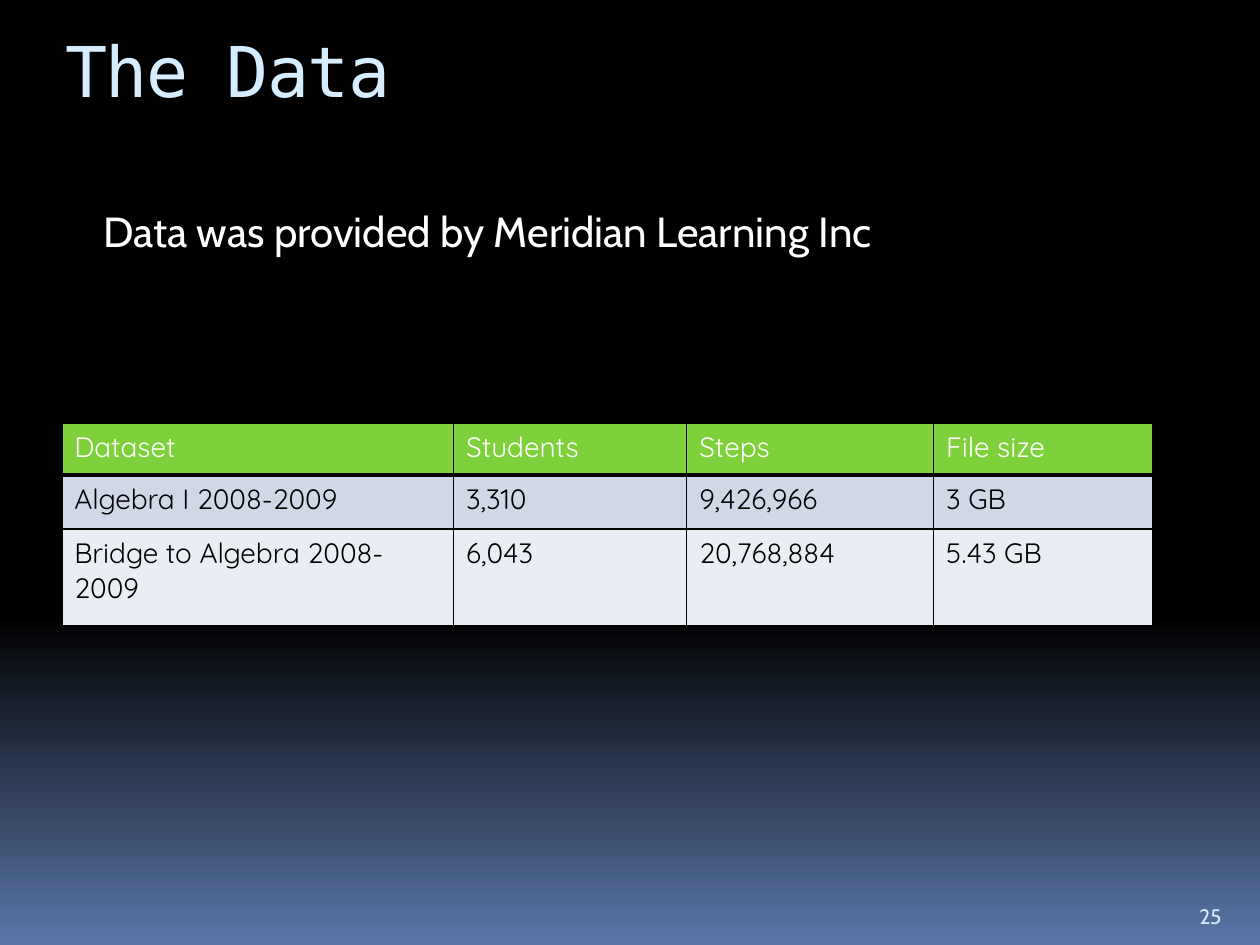
import copy
import pptx
import pptx.util
import pptx.dml.color
import pptx.enum.shapes
import pptx.enum.text
import pptx.oxml.ns

HUES = {"black": "000000", "white": "FFFFFF", "sky": "D6ECFF", "blue": "5B77A8",
        "green": "7FD13B", "band": "D0D8E8", "pale": "E9EDF4"}
MONO, SANS, GRID = "DejaVu Sans Mono", "Cabin", "Quicksand"
ROWS = [["Dataset", "Students", "Steps", "File size"],
        ["Algebra I 2008-2009", "3,310", "9,426,966", "3 GB"],
        ["Bridge to Algebra 2008-2009", "6,043", "20,768,884", "5.43 GB"]]
# Fill and text colour of each row
LOOKS = [("green", "white"), ("band", "black"), ("pale", "black")]
COLS = [3.11, 1.85, 1.96, 1.74]
HIGHS = [0.41, 0.43, 0.77]
# Left and width of each accent bar, from the left of their box
BARS = [(0.1, 0.05), (0.05, 0.03), (0.03, 0.01), (0, 0.01)]

inch = pptx.util.Inches
ns = pptx.oxml.ns.qn
Pin = pptx.enum.text.MSO_ANCHOR


def hue(name):
    return pptx.dml.color.RGBColor.from_string(HUES[name])


def write(frame, text, font, size, tint):
    frame.text = text
    for part in frame.paragraphs:
        part.alignment = pptx.enum.text.PP_ALIGN.LEFT
        for run in part.runs:
            run.font.name = font
            run.font.size = pptx.util.Pt(size)
            run.font.bold = False
            run.font.color.rgb = hue(tint)


def place(shape, box, pin):
    shape.left, shape.top, shape.width, shape.height = map(inch, box)
    frame = shape.text_frame
    frame.word_wrap = True
    frame.auto_size = pptx.enum.text.MSO_AUTO_SIZE.NONE
    frame.vertical_anchor = pin
    return frame


def back(slide):
    # Black down to 65 %, then fading to blue
    fill = slide.background.fill
    fill.gradient()
    fill.gradient_angle = 270
    stops = slide.element.find(".//" + ns("a:gsLst"))
    stops.insert(1, copy.deepcopy(stops[0]))
    for stop, name, spot in zip(fill.gradient_stops,
                                ("black", "black", "blue"), (0, 0.65, 1)):
        stop.color.rgb = hue(name)
        stop.position = spot


def bars(slide, box):
    # Accent bars beside the title
    left, top, _, high = box
    for shift, wide in BARS:
        bar = slide.shapes.add_shape(
            pptx.enum.shapes.MSO_SHAPE.RECTANGLE,
            *map(inch, (left + shift, top, wide, high)))
        bar.shadow.inherit = False
        bar.fill.solid()
        bar.fill.fore_color.rgb = hue("black")
        bar.line.fill.background()


def title(slide, box):
    frame = place(slide.shapes.title, box, Pin.TOP)
    write(frame, "The Data", MONO, 40, "sky")
    frame.paragraphs[0].runs[0].font._element.set("spc", "-100")


def body(slide, box):
    frame = place(slide.placeholders[1], box, Pin.TOP)
    write(frame, "Data was provided by Meridian Learning Inc", SANS, 24, "white")
    part = frame.paragraphs[0]
    part.space_before = pptx.util.Pt(7)
    # Indent without a bullet
    props = part._p.get_or_add_pPr()
    props.set("marL", str(inch(0.3)))
    props.set("indent", "0")
    props.append(props.makeelement(ns("a:buNone"), {}))


def edge(cell, sides):
    # Borders must come before the fill in the cell properties
    props = cell._tc.get_or_add_tcPr()
    for spot, (side, wide) in enumerate(sides.items()):
        line = props.makeelement(ns("a:" + side),
                                 {"w": str(pptx.util.Pt(wide))})
        fill = line.makeelement(ns("a:solidFill"), {})
        fill.append(fill.makeelement(ns("a:srgbClr"), {"val": HUES["black"]}))
        line.append(fill)
        props.insert(spot, line)


def table(slide, box):
    grid = slide.shapes.add_table(len(ROWS), len(COLS), *map(inch, box)).table
    for col, wide in zip(grid.columns, COLS):
        col.width = inch(wide)
    for r, (row, high) in enumerate(zip(grid.rows, HIGHS)):
        row.height = inch(high)
        shade, tint = LOOKS[r]
        for cell, text in zip(row.cells, ROWS[r]):
            write(cell.text_frame, text, GRID, 16, tint)
            cell.fill.solid()
            cell.fill.fore_color.rgb = hue(shade)
            edge(cell, {"lnL": 1, "lnR": 1, "lnT": 3 if r == 1 else 1,
                        "lnB": 3 if r == 0 else 1})


def number(slide, box):
    frame = place(slide.shapes.add_textbox(*map(inch, box)), box, Pin.BOTTOM)
    write(frame, "25", SANS, 12, "sky")


def main():
    deck = pptx.Presentation()
    deck.slide_width, deck.slide_height = inch(10), inch(7.5)
    slide = deck.slides.add_slide(deck.slide_layouts[1])
    back(slide)
    bars(slide, (0.24, 0.74, 0.15, 0.4))
    title(slide, (0.42, 0.17, 8.5, 1.21))
    body(slide, (0.42, 1.58, 8.99, 1.02))
    table(slide, (0.49, 3.36, sum(COLS), sum(HIGHS)))
    number(slide, (9.42, 7.02, 0.5, 0.4))
    deck.save("out.pptx")


if __name__ == "__main__":
    main()
